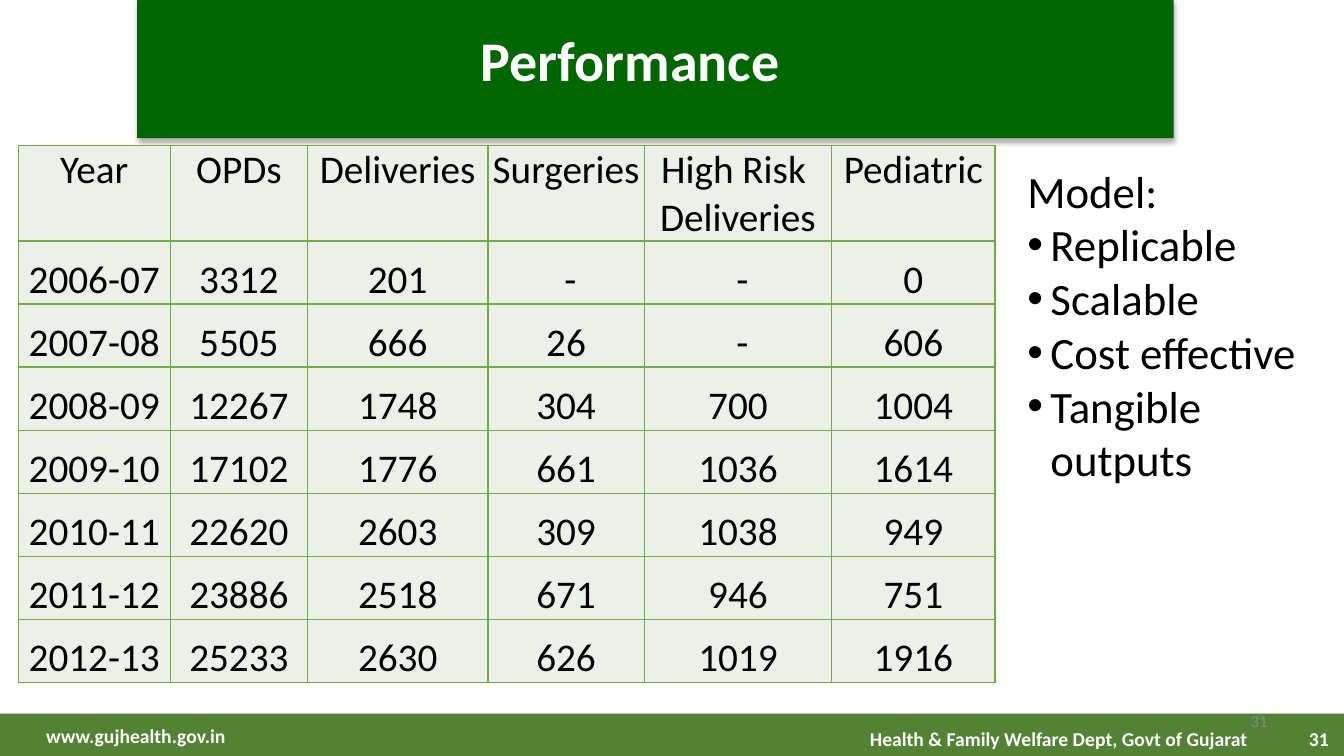
import pptx
import pptx.util
import pptx.dml.color
import pptx.enum.text
import pptx.enum.shapes
import pptx.oxml
import pptx.oxml.ns

Inches = pptx.util.Inches
Align = pptx.enum.text.PP_ALIGN
Anchor = pptx.enum.text.MSO_ANCHOR
NS = pptx.oxml.ns.nsdecls("a")

COLORS = {
    "title": "006600", "footer": "548235", "cell": "EBF1E9", "line": "70AD47",
    "white": "FFFFFF", "black": "000000", "grey": "898989",
}
COLS = [1.51, 1.36, 1.79, 1.55, 1.86, 1.62]
DATA = [
    ["Year", "OPDs", "Deliveries", "Surgeries", "High Risk \vDeliveries", "Pediatric"],
    ["2006-07", "3312", "201", " -", " -", "0"],
    ["2007-08", "5505", "666", "26", " -", "606"],
    ["2008-09", "12267", "1748", "304", "700", "1004"],
    ["2009-10", "17102", "1776", "661", "1036", "1614"],
    ["2010-11", "22620", "2603", "309", "1038", "949"],
    ["2011-12", "23886", "2518", "671", "946", "751"],
    ["2012-13", "25233", "2630", "626", "1019", "1916"],
]
MODEL = ["Model:", "Replicable", "Scalable", "Cost effective", "Tangible outputs"]


def rgb(name):
    return pptx.dml.color.RGBColor.from_string(COLORS[name])


def style(frame, size, color, bold=False, align=Align.LEFT):
    for para in frame.paragraphs:
        para.alignment = align
        for run in para.runs:
            run.font.name = "Calibri"
            run.font.size = pptx.util.Pt(size)
            run.font.bold = bold
            run.font.color.rgb = rgb(color)


def label(slide, box, text, size, color, bold=False, align=Align.LEFT,
          anchor=Anchor.TOP):
    shape = slide.shapes.add_textbox(*map(Inches, box))
    frame = shape.text_frame
    frame.word_wrap = True
    frame.vertical_anchor = anchor
    frame.text = text
    style(frame, size, color, bold, align)
    return frame


def bar(slide, box, color):
    shape = slide.shapes.add_shape(
        pptx.enum.shapes.MSO_SHAPE.RECTANGLE, *map(Inches, box))
    shape.fill.solid()
    shape.fill.fore_color.rgb = rgb(color)
    shape.line.fill.background()
    shape.shadow.inherit = False
    effects = shape.element.spPr.find(pptx.oxml.ns.qn("a:effectLst"))
    effects.append(pptx.oxml.parse_xml(
        f'<a:outerShdw {NS} blurRad="44450" dist="27940" dir="5400000" rotWithShape="0">'
        f'<a:srgbClr val="{COLORS["black"]}"><a:alpha val="32000"/></a:srgbClr>'
        '</a:outerShdw>'))
    return shape


def header(slide, box):
    x, y, w, h = box
    bar(slide, box, "title")
    frame = label(slide, (x + 1.14, y + 0.02, 7.5, 1.25), "Performance", 40, "white",
                  True, Align.CENTER, Anchor.MIDDLE)
    frame.paragraphs[0].line_spacing = 0.9


def footer(slide, box):
    x, y, w, h = box
    frame = bar(slide, box, "footer").text_frame
    frame.margin_top = Inches(0.08)
    frame.margin_bottom = 0
    frame.margin_right = Inches(0.15)
    frame.vertical_anchor = Anchor.MIDDLE
    frame.text = "31"
    style(frame, 14, "white", True, Align.RIGHT)
    label(slide, (x + 8.53, y + 0.08, 4.2, 0.34),
          "Health & Family Welfare Dept, Govt of Gujarat", 14, "white", True)
    label(slide, (x + 0.36, y + 0.05, 2.11, 0.34), "www.gujhealth.gov.in",
          14, "white", True)
    label(slide, (x + 9.56, y - 0.13, 3.11, 0.4), "31", 12, "grey",
          align=Align.RIGHT, anchor=Anchor.MIDDLE)


def border(cell):
    props = cell._tc.get_or_add_tcPr()
    for place, side in enumerate(("lnL", "lnR", "lnT", "lnB")):
        props.insert(place, pptx.oxml.parse_xml(
            f'<a:{side} {NS} w="12700"><a:solidFill><a:srgbClr val="{COLORS["line"]}"/>'
            f'</a:solidFill></a:{side}>'))


def results(slide, box):
    table = slide.shapes.add_table(len(DATA), len(COLS), *map(Inches, box)).table
    table.first_row = False
    table.horz_banding = False
    for col, width in zip(table.columns, COLS):
        col.width = Inches(width)
    top = 0.95
    for i, values in enumerate(DATA):
        table.rows[i].height = Inches(top if i == 0 else (box[3] - top) / (len(DATA) - 1))
        for j, value in enumerate(values):
            cell = table.cell(i, j)
            cell.margin_left = cell.margin_right = cell.margin_top = Inches(0.01)
            cell.margin_bottom = 0
            cell.vertical_anchor = Anchor.BOTTOM if i else Anchor.TOP
            cell.fill.solid()
            cell.fill.fore_color.rgb = rgb("cell")
            cell.text_frame.text = value
            style(cell.text_frame, 28, "black", align=Align.CENTER)
            border(cell)


def model(slide, box):
    frame = label(slide, box, "\n".join(MODEL), 32, "black")
    for para in frame.paragraphs[1:]:
        props = para._p.get_or_add_pPr()
        props.set("marL", str(Inches(0.23)))
        props.set("indent", str(-Inches(0.23)))
        props.append(pptx.oxml.parse_xml(f'<a:buFont {NS} typeface="Arial"/>'))
        props.append(pptx.oxml.parse_xml(f'<a:buChar {NS} char="•"/>'))


def main():
    deck = pptx.Presentation()
    deck.slide_width = Inches(13.33)
    deck.slide_height = Inches(7.5)
    slide = deck.slides.add_slide(deck.slide_layouts[6])
    header(slide, (1.36, -0.02, 10.28, 1.39))
    footer(slide, (0, 7.08, 13.33, 0.42))
    results(slide, (0.18, 1.44, sum(COLS), 5.33))
    model(slide, (10.09, 1.57, 2.95, 4.41))
    deck.save("out.pptx")


if __name__ == "__main__":
    main()
